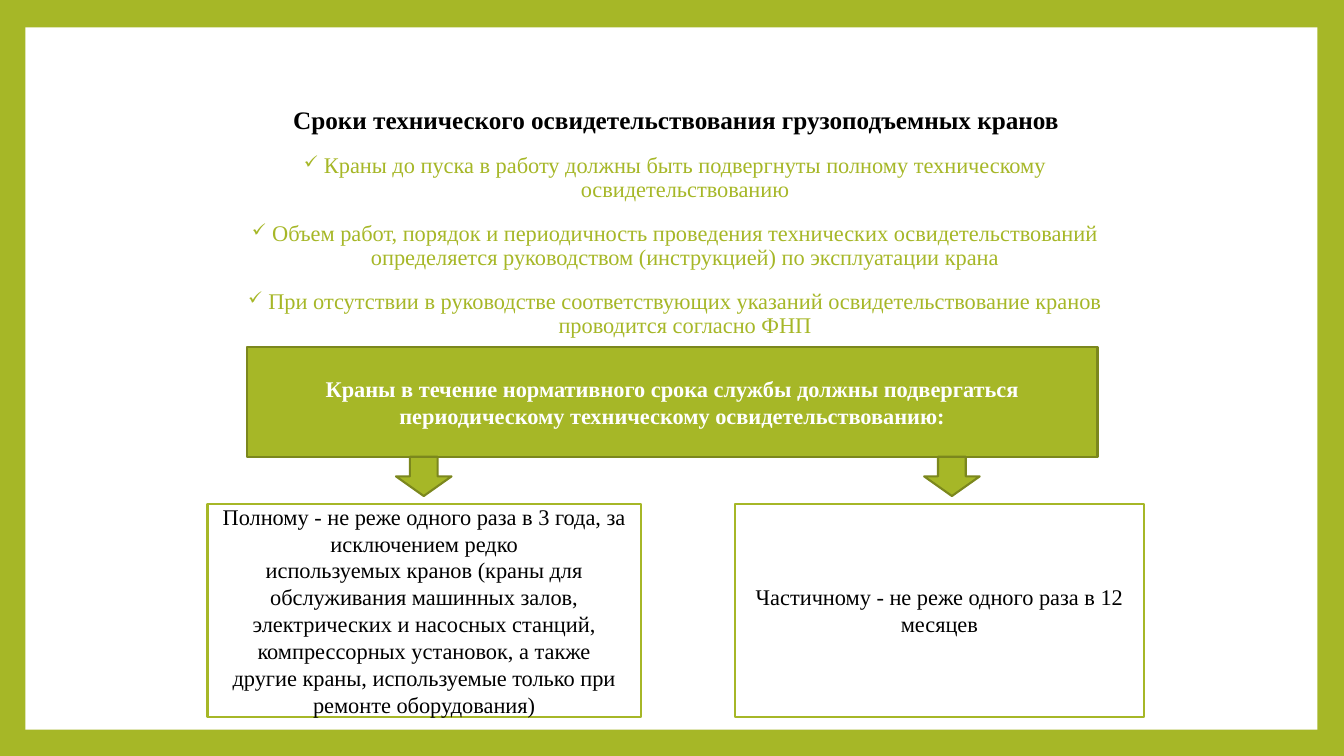
from dataclasses import dataclass

import lxml.etree
import pptx
import pptx.dml.color
import pptx.enum.shapes
import pptx.enum.text
import pptx.oxml.ns
import pptx.util

Cm = pptx.util.Cm
Pt = pptx.util.Pt
MSO_SHAPE = pptx.enum.shapes.MSO_SHAPE
ANCHOR = pptx.enum.text.MSO_ANCHOR

FONT = "Times New Roman"
LIME = "A6B727"
OLIVE = "7B871D"
WHITE = "FFFFFF"
BLACK = "000000"


@dataclass
class Block:
    left: float
    top: float
    width: float
    height: float
    lines: tuple[str, ...] = ()
    color: str = BLACK
    size: int = 16
    bold: bool = False
    fill: str = WHITE
    line: str = ""
    shape: int = MSO_SHAPE.RECTANGLE
    anchor: int = ANCHOR.MIDDLE
    line_spacing: float = 1.0
    space_before: int = 0
    bullet: str = ""


TITLE = Block(
    5.61, 2.18, 22.86, 1.78,
    ("Сроки технического освидетельствования грузоподъемных кранов",),
    size=18, bold=True, line_spacing=0.9,
)
RULES = Block(
    5.03, 3.76, 23.83, 14.5,
    (
        "Краны до пуска в работу должны быть подвергнуты полному техническому освидетельствованию",
        "Объем работ, порядок и периодичность проведения технических освидетельствований "
        "определяется руководством (инструкцией) по эксплуатации крана",
        "При отсутствии в руководстве соответствующих указаний освидетельствование кранов "
        "проводится согласно ФНП",
    ),
    color=LIME, anchor=ANCHOR.TOP, line_spacing=0.9, space_before=14, bullet="✓",
)
PANEL = Block(0.64, 0.69, 32.56, 17.7)
BANNER = Block(
    6.22, 8.74, 21.44, 2.77,
    ("Краны в течение нормативного срока службы должны подвергаться "
     "периодическому техническому освидетельствованию:",),
    color=WHITE, bold=True, fill=LIME, line=OLIVE,
)
FULL = Block(
    5.23, 12.7, 10.92, 5.36,
    (
        "Полному - не реже одного раза в 3 года, за исключением редко",
        "используемых кранов (краны для обслуживания машинных залов,",
        "электрических и насосных станций, компрессорных установок, а также",
        "другие краны, используемые только при ремонте оборудования)",
    ),
    line=LIME,
)
PARTIAL = Block(
    18.52, 12.7, 10.31, 5.36,
    ("Частичному - не реже одного раза в 12 месяцев",),
    line=LIME,
)
ARROWS = [
    Block(left, 11.51, 1.4, 0.99, fill=LIME, line=OLIVE, shape=MSO_SHAPE.DOWN_ARROW)
    for left in (9.98, 23.29)
]


def rgb(value: str) -> pptx.dml.color.RGBColor:
    return pptx.dml.color.RGBColor.from_string(value)


def add_bullet(p, char: str, color: str) -> None:
    qn = pptx.oxml.ns.qn
    pPr = p._p.get_or_add_pPr()
    pPr.set("marL", str(Cm(0.64)))
    pPr.set("indent", str(Cm(-0.51)))
    buClr = lxml.etree.SubElement(pPr, qn("a:buClr"))
    lxml.etree.SubElement(buClr, qn("a:srgbClr"), val=color)
    lxml.etree.SubElement(pPr, qn("a:buSzPct"), val="80000")
    lxml.etree.SubElement(pPr, qn("a:buChar"), char=char)


def write_text(tf, block: Block) -> None:
    tf.word_wrap = True
    tf.vertical_anchor = block.anchor
    for i, line in enumerate(block.lines):
        p = tf.add_paragraph() if i else tf.paragraphs[0]
        p.alignment = pptx.enum.text.PP_ALIGN.CENTER
        p.line_spacing = block.line_spacing
        p.space_before = Pt(block.space_before if i else 0)
        if block.bullet:
            add_bullet(p, block.bullet, block.color)
        r = p.add_run()
        r.text = line
        r.font.name = FONT
        r.font.size = Pt(block.size)
        r.font.bold = block.bold
        r.font.color.rgb = rgb(block.color)


def frame(block: Block) -> tuple:
    return tuple(Cm(v) for v in (block.left, block.top, block.width, block.height))


def add_text(s, block: Block) -> None:
    write_text(s.shapes.add_textbox(*frame(block)).text_frame, block)


def add_block(s, block: Block) -> None:
    sp = s.shapes.add_shape(block.shape, *frame(block))
    sp.shadow.inherit = False
    sp.fill.solid()
    sp.fill.fore_color.rgb = rgb(block.fill)
    if block.line:
        sp.line.color.rgb = rgb(block.line)
        sp.line.width = Pt(1.5)
    else:
        sp.line.fill.background()
    write_text(sp.text_frame, block)


def main() -> None:
    prs = pptx.Presentation()
    prs.slide_width = Cm(33.87)
    prs.slide_height = Cm(19.05)
    s = prs.slides.add_slide(prs.slide_layouts[6])
    s.background.fill.solid()
    s.background.fill.fore_color.rgb = rgb(LIME)
    add_block(s, PANEL)
    for block in (TITLE, RULES):
        add_text(s, block)
    for block in (BANNER, FULL, PARTIAL, *ARROWS):
        add_block(s, block)
    prs.save("out.pptx")


if __name__ == "__main__":
    main()
